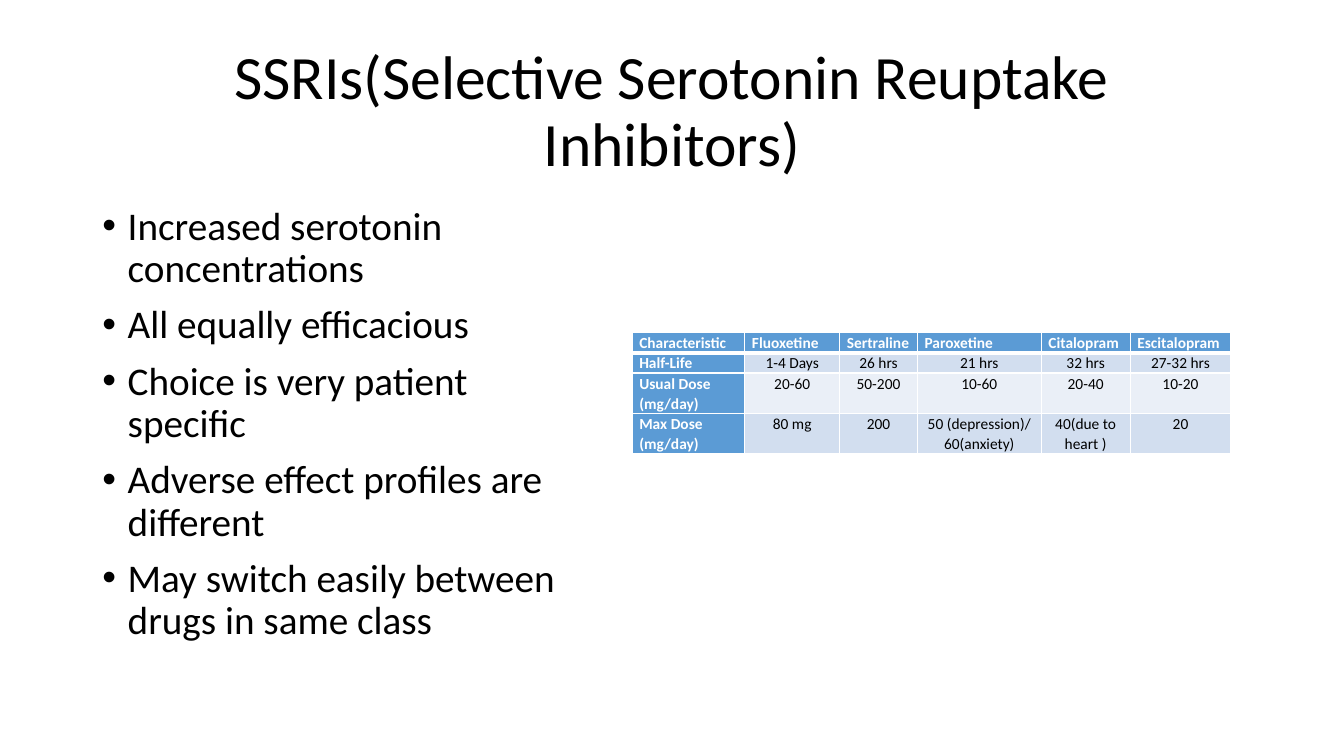
"""Build a slide on SSRIs with key points and a dosing table."""
from lxml import etree
from pptx import Presentation
from pptx.dml.color import RGBColor
from pptx.enum.text import MSO_ANCHOR, PP_ALIGN
from pptx.oxml.ns import qn
from pptx.util import Cm, Pt

CENTER, LEFT = PP_ALIGN.CENTER, PP_ALIGN.LEFT
MIDDLE, TOP = MSO_ANCHOR.MIDDLE, MSO_ANCHOR.TOP

TITLE = "SSRIs(Selective Serotonin Reuptake Inhibitors)"
POINTS = [
    "Increased serotonin concentrations",
    "All equally efficacious",
    "Choice is very patient specific",
    "Adverse effect profiles are different",
    "May switch easily between drugs in same class",
]
DOSING = [
    ["Characteristic", "Fluoxetine", "Sertraline", "Paroxetine", "Citalopram", "Escitalopram"],
    ["Half-Life", "1-4 Days", "26 hrs", "21 hrs", "32 hrs", "27-32 hrs"],
    ["Usual Dose (mg/day)", "20-60", "50-200", "10-60", "20-40", "10-20"],
    ["Max Dose (mg/day)", "80 mg", "200", "50 (depression)/\n60(anxiety)", "40(due to heart )", "20"],
]
COLUMN_WIDTHS = [2.84, 2.39, 1.96, 3.12, 2.24, 2.54]
ROW_HEIGHTS = [0.51, 0.51, 1.02, 1.02]
HEADING_FILL, BAND_FILLS = "5B9BD5", ["EAEFF7", "D2DEEF"]
BLACK, WHITE = "000000", "FFFFFF"


def color(code):
    return RGBColor.from_string(code)


def style(target, values):
    for name, value in values.items():
        setattr(target, name, value)


def write(frame, lines, size, ink, paragraph_format, bold=False, bullet=False):
    frame.text = "\n".join(lines)
    for index, paragraph in enumerate(frame.paragraphs):
        if bullet:
            properties = paragraph._p.get_or_add_pPr()
            properties.set("marL", str(Cm(0.64)))
            properties.set("indent", str(-Cm(0.64)))
            etree.SubElement(properties, qn("a:buFont"), typeface="Arial")
            etree.SubElement(properties, qn("a:buChar"), char="•")
            if index:
                paragraph.space_before = Pt(10)
        style(paragraph, paragraph_format)
        for run in paragraph.runs:
            style(run.font, {"name": "Calibri", "size": Pt(size), "bold": bold})
            run.font.color.rgb = color(ink)


def add_text(slide, box, anchor, lines, size, alignment, bullet=False):
    frame = slide.shapes.add_textbox(*map(Cm, box)).text_frame
    style(frame, {"word_wrap": True, "vertical_anchor": anchor})
    write(frame, lines, size, BLACK, {"alignment": alignment, "line_spacing": 0.9}, bullet=bullet)


def add_borders(cell, bottom):
    properties = cell._tc.get_or_add_tcPr()
    for index, (side, width) in enumerate({"L": 1, "R": 1, "T": 1, "B": bottom}.items()):
        line = etree.Element(qn("a:ln" + side), w=str(Pt(width)))
        fill = etree.SubElement(line, qn("a:solidFill"))
        etree.SubElement(fill, qn("a:srgbClr"), val=WHITE)
        properties.insert(index, line)


def add_dosing(slide):
    table = slide.shapes.add_table(
        len(DOSING), len(COLUMN_WIDTHS), Cm(15.93), Cm(8.38),
        Cm(sum(COLUMN_WIDTHS)), Cm(sum(ROW_HEIGHTS))).table
    for column, width in zip(table.columns, COLUMN_WIDTHS):
        column.width = Cm(width)
    for r, (row, height) in enumerate(zip(DOSING, ROW_HEIGHTS)):
        table.rows[r].height = Cm(height)
        for c, value in enumerate(row):
            cell, heading = table.cell(r, c), r == 0 or c == 0
            style(cell, {"margin_left": Cm(0.18), "margin_right": Cm(0.18),
                         "margin_top": 0, "margin_bottom": 0})
            cell.fill.solid()
            cell.fill.fore_color.rgb = color(HEADING_FILL if heading else BAND_FILLS[r % 2])
            add_borders(cell, 1 if r else 3)
            write(cell.text_frame, value.split("\n"), 11, WHITE if heading else BLACK,
                  {"alignment": LEFT if heading else CENTER, "line_spacing": 1.07}, bold=heading)


def main():
    deck = Presentation()
    style(deck, {"slide_width": Cm(33.87), "slide_height": Cm(19.05)})
    slide = deck.slides.add_slide(deck.slide_layouts[6])
    add_text(slide, (2.33, 1.01, 29.21, 3.68), MIDDLE, [TITLE], 44, CENTER)
    add_text(slide, (2.33, 5.07, 12.04, 12.09), TOP, POINTS, 28, LEFT, bullet=True)
    add_dosing(slide)
    deck.save("out.pptx")


if __name__ == "__main__":
    main()
